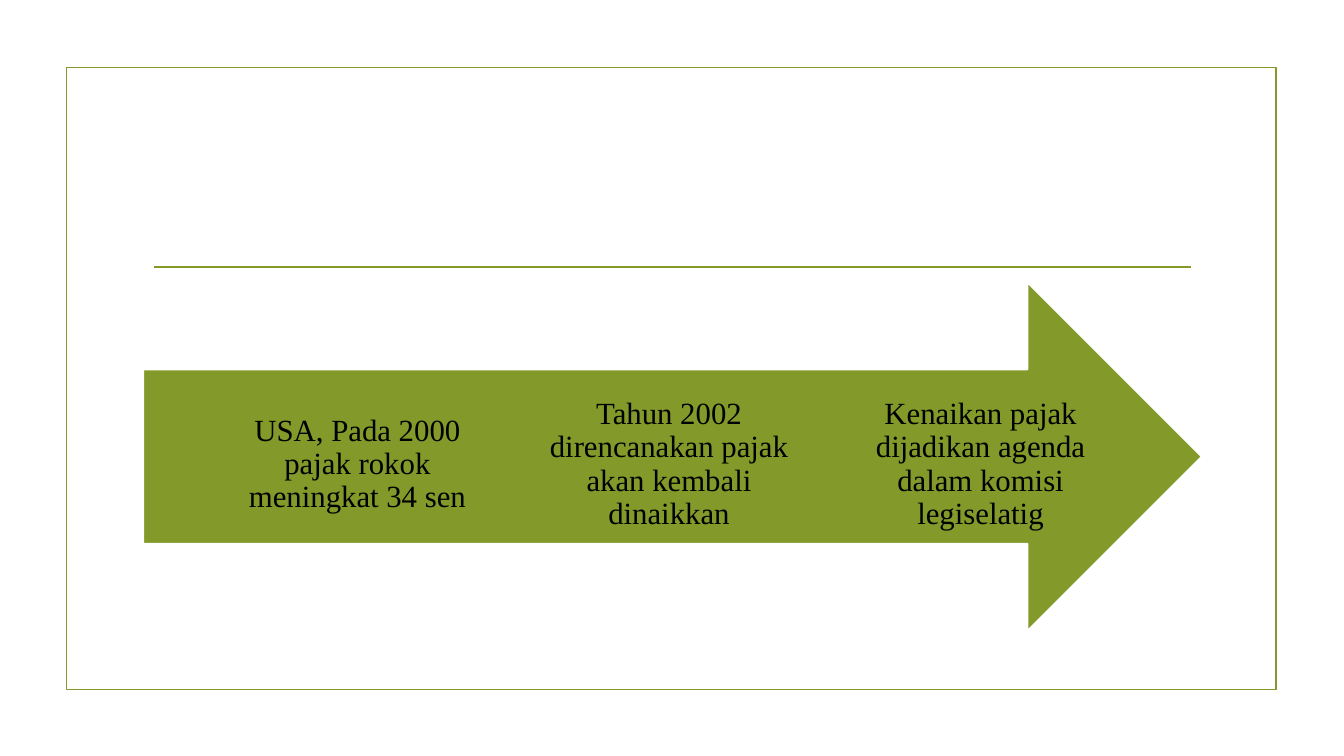
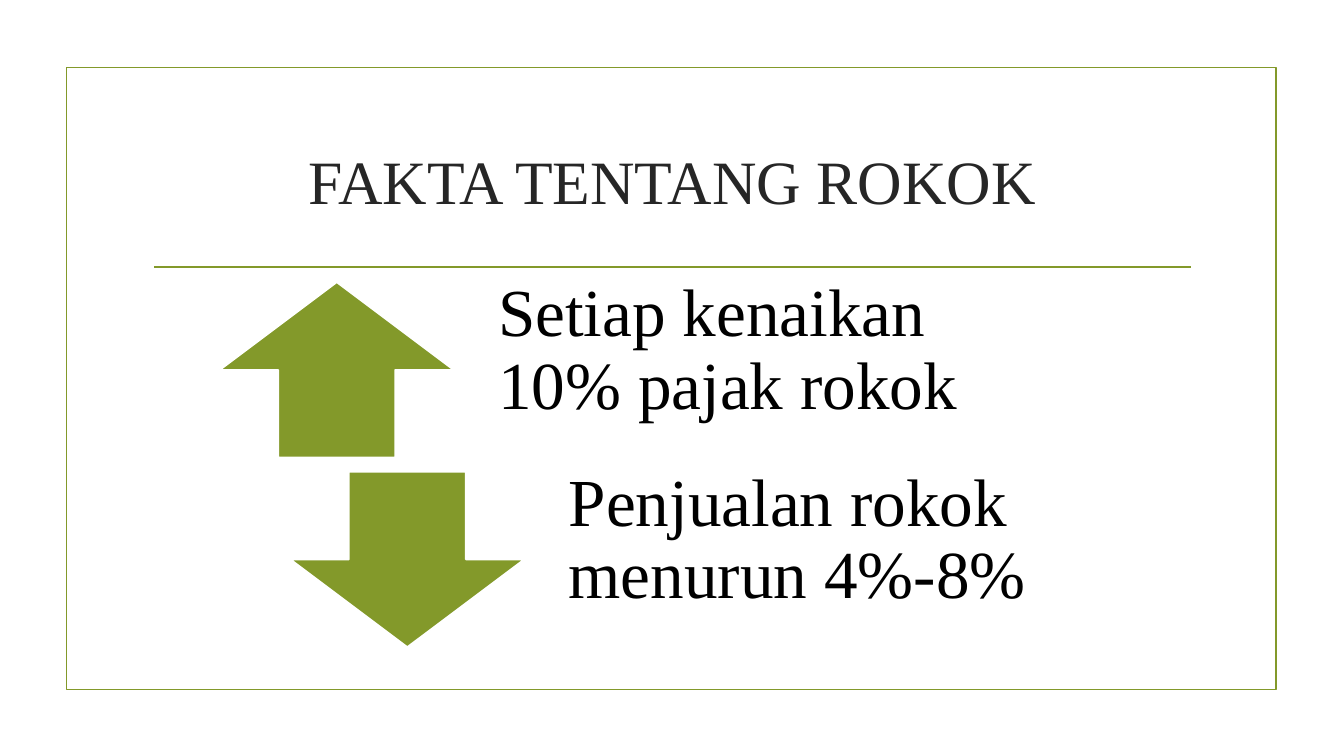
from lxml import etree
from pptx import Presentation
from pptx.dml.color import RGBColor
from pptx.enum.shapes import MSO_CONNECTOR, MSO_SHAPE
from pptx.enum.text import MSO_ANCHOR, PP_ALIGN
from pptx.oxml.ns import qn
from pptx.util import Inches, Pt

COLORS = {"green": "83992A", "white": "FFFFFF", "title": "262626", "text": "000000"}
FONT = "Times New Roman"
LINE_WIDTH = Pt(1.25)

# Boxes are left, top, width, height in inches
FRAME = (0.66, 0.67, 12, 6.17)
TITLE = (1.42, 1.07, 10.5, 1.43)
CONTENT = (1.42, 2.8, 10.5, 3.46)
RULE_LEFT, RULE_RIGHT, RULE_TOP = 1.53, 11.81, 2.65


def color(name):
    return RGBColor.from_string(COLORS[name])


def add_shape(slide, preset, box, fill, line):
    shape = slide.shapes.add_shape(preset, *map(Inches, box))
    shape.shadow.inherit = False
    if fill:
        shape.fill.solid()
        shape.fill.fore_color.rgb = color(fill)
    else:
        shape.fill.background()
    shape.line.color.rgb = color(line)
    shape.line.width = LINE_WIDTH


def add_text(slide, box, text, size, text_color="text", align=PP_ALIGN.CENTER,
             insets=(0.1, 0.05, 0.1, 0.05), spacing=0.9):
    frame = slide.shapes.add_textbox(*map(Inches, box)).text_frame
    frame.word_wrap = True
    frame.vertical_anchor = MSO_ANCHOR.MIDDLE
    (frame.margin_left, frame.margin_top,
     frame.margin_right, frame.margin_bottom) = map(Inches, insets)
    paragraph = frame.paragraphs[0]
    paragraph.text = text
    paragraph.alignment = align
    paragraph.line_spacing = spacing
    paragraph.font.name = FONT
    paragraph.font.size = Pt(size)
    paragraph.font.color.rgb = color(text_color)


def add_base_slide(presentation, title=None):
    """Blank slide with the frame, the rule and an optional title."""
    slide = presentation.slides.add_slide(presentation.slide_layouts[6])
    add_shape(slide, MSO_SHAPE.RECTANGLE, FRAME, None, "green")
    rule = slide.shapes.add_connector(
        MSO_CONNECTOR.STRAIGHT, Inches(RULE_LEFT), Inches(RULE_TOP),
        Inches(RULE_RIGHT), Inches(RULE_TOP))
    rule.line.color.rgb = color("green")
    rule.line.width = LINE_WIDTH
    etree.SubElement(rule._element.spPr, qn("a:effectLst"))
    if title:
        add_text(slide, TITLE, title, 44, "title", spacing=1)
    return slide


def add_process_arrow(slide, box, steps):
    """Wide arrow with evenly spaced steps on its shaft."""
    left, top, width, height = box
    add_shape(slide, MSO_SHAPE.RIGHT_ARROW, box, "green", "white")
    step_width, pitch = 2.57, 3.09
    for index, step in enumerate(steps):
        step_box = (left + 0.84 + index * pitch, top + height / 4 + 0.08,
                    step_width, height / 2)
        add_text(slide, step_box, step, 22, insets=(0, 0.24, 0, 0.24))


def add_opposing_arrows(slide, box, rows):
    """Rows of an arrow and its text, each row shifted to the right."""
    left, top = box[:2]
    arrow_width, row_height, text_width = 2.32, 1.74, 5.88
    for index, (preset, text) in enumerate(rows):
        row_left = left + 0.76 + index * 0.7
        row_top = top + index * 1.88
        add_shape(slide, preset, (row_left, row_top, arrow_width, row_height),
                  "green", "white")
        text_box = (row_left + arrow_width + 0.07, row_top, text_width, row_height)
        add_text(slide, text_box, text, 48, align=PP_ALIGN.LEFT,
                 insets=(0.37, 0, 0.37, 0.37))


def main():
    presentation = Presentation()
    presentation.slide_width = Inches(13.33)
    presentation.slide_height = Inches(7.5)

    # Tax timeline
    add_process_arrow(add_base_slide(presentation), CONTENT, [
        "USA, Pada 2000 pajak rokok meningkat 34 sen",
        "Tahun 2002 direncanakan pajak akan kembali dinaikkan",
        "Kenaikan pajak dijadikan agenda dalam komisi legiselatig",
    ])

    # Tax against sales
    add_opposing_arrows(add_base_slide(presentation, "FAKTA TENTANG ROKOK"), CONTENT, [
        (MSO_SHAPE.UP_ARROW, "Setiap kenaikan 10% pajak rokok"),
        (MSO_SHAPE.DOWN_ARROW, "Penjualan rokok menurun 4%-8%"),
    ])

    presentation.save("out.pptx")


if __name__ == "__main__":
    main()
